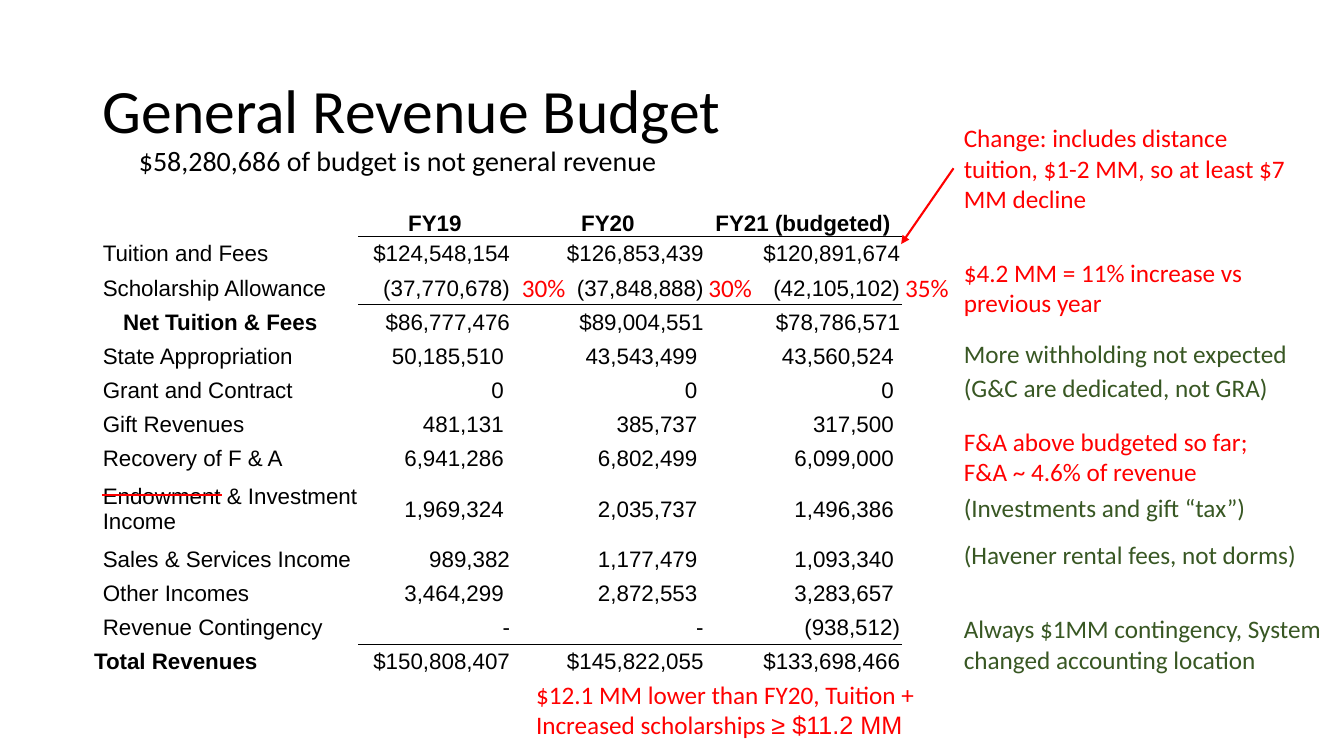
from lxml.etree import SubElement
from pptx import Presentation
from pptx.dml.color import RGBColor
from pptx.enum.shapes import MSO_CONNECTOR
from pptx.enum.text import MSO_ANCHOR as Anchor, PP_ALIGN as Align
from pptx.oxml import parse_xml
from pptx.oxml.ns import nsdecls, qn
from pptx.util import Cm, Pt

COLORS = {"black": "000000", "white": "FFFFFF", "red": "FF0000", "green": "385723"}

BUDGET = [
    ("", "FY19", "FY20", "FY21 (budgeted)"),
    ("Tuition and Fees", "$124,548,154", "$126,853,439", "$120,891,674"),
    ("Scholarship Allowance", "(37,770,678)", "(37,848,888)", "(42,105,102)"),
    ("Net Tuition & Fees", "$86,777,476", "$89,004,551", "$78,786,571"),
    ("State Appropriation", "50,185,510 ", "43,543,499 ", "43,560,524 "),
    ("Grant and Contract", "0 ", "0 ", "0 "),
    ("Gift Revenues", "481,131 ", "385,737 ", "317,500 "),
    ("Recovery of F & A", "6,941,286 ", "6,802,499 ", "6,099,000 "),
    ("Endowment & Investment Income", "1,969,324 ", "2,035,737 ", "1,496,386 "),
    ("Sales & Services Income", "989,382", "1,177,479 ", "1,093,340 "),
    ("Other Incomes", "3,464,299 ", "2,872,553 ", "3,283,657 "),
    ("Revenue Contingency", "-", "-", "(938,512)"),
    ("Total Revenues", "$150,808,407", "$145,822,055", "$133,698,466"),
]
COLUMN_WIDTHS = [6.7, 3.84, 4.88, 4.95]
ROW_HEIGHT = 0.86
SPECIAL_HEIGHTS = {0: 1.46, 8: 1.68}
RULED_ROWS = (0, 2, 11)
LABEL_INDENTS = {"Net Tuition & Fees": 0.76, "Total Revenues": 0.03}

NOTE_X = 24.04
NOTES = [
    (NOTE_X, 2.97, 9.1, 2.56, "red",
     ["Change: includes distance tuition, $1-2 MM, so at least $7 MM decline"]),
    (NOTE_X, 6.35, 9.1, 1.8, "red", ["$4.2 MM = 11% increase vs previous year"]),
    (NOTE_X, 8.41, 8.76, 1.03, "green", ["More withholding not expected"]),
    (NOTE_X, 9.25, 9.1, 1.03, "green", ["(G&C are dedicated, not GRA)"]),
    (NOTE_X, 10.62, 9.1, 1.8, "red",
     ["F&A above budgeted so far;", "F&A ~ 4.6% of revenue"]),
    (NOTE_X, 12.27, 9.1, 1.03, "green", ["(Investments and gift “tax”)"]),
    (NOTE_X, 13.46, 9.1, 1.03, "green", ["(Havener rental fees, not dorms)"]),
    (NOTE_X, 15.34, 9.63, 1.8, "green",
     ["Always $1MM contingency, System changed accounting location"]),
]
DISCOUNT_RATES = [(12.9, "30%"), (17.6, "30%"), (22.56, "35%")]
DECLINE = "$12.1 MM lower than FY20, Tuition + Increased scholarships "
DECLINE_CAUSE = "≥ $11.2 MM"


def style(paragraph, size, color="black", face="Calibri", bold=False):
    font = paragraph.font
    font.name, font.size, font.bold = face, Pt(size), bold
    font.color.rgb = RGBColor.from_string(COLORS[color])


def add_text(slide, x, y, width, height, lines, size=18, color="black", wrap=True):
    frame = slide.shapes.add_textbox(Cm(x), Cm(y), Cm(width), Cm(height)).text_frame
    frame.word_wrap = wrap
    frame.text = "\n".join(lines)
    for paragraph in frame.paragraphs:
        style(paragraph, size, color)
    return frame


def add_line(slide, start, end, width, arrow=False):
    line = slide.shapes.add_connector(
        MSO_CONNECTOR.STRAIGHT, *(Cm(value) for value in start + end))
    line.line.color.rgb = RGBColor.from_string(COLORS["red"])
    line.line.width = Pt(width)
    if arrow:
        SubElement(line.line._get_or_add_ln(), qn("a:tailEnd"), type="triangle")
    SubElement(line._element.spPr, qn("a:effectLst"))


def add_border(cell, side):
    cell._tc.get_or_add_tcPr().insert(0, parse_xml(
        f'<a:{side} {nsdecls("a")} w="12700"><a:solidFill>'
        f'<a:srgbClr val="{COLORS["black"]}"/></a:solidFill></a:{side}>'))


def fill_cell(cell, row, column, text):
    cell.fill.solid()
    cell.fill.fore_color.rgb = RGBColor.from_string(COLORS["white"])
    cell.margin_left = Cm(0.03 if column else LABEL_INDENTS.get(text, 0.25))
    cell.margin_right = cell.margin_top = Cm(0.03)
    cell.margin_bottom = 0
    cell.vertical_anchor = Anchor.MIDDLE if row else Anchor.BOTTOM
    cell.text = text
    paragraph = cell.text_frame.paragraphs[0]
    style(paragraph, 16, face="Arial", bold=row == 0 or text in LABEL_INDENTS)
    if column:
        paragraph.alignment = Align.RIGHT if row else Align.CENTER
        if row in RULED_ROWS:
            add_border(cell, "lnB")
        if row - 1 in RULED_ROWS:
            add_border(cell, "lnT")


def add_budget(slide):
    heights = [SPECIAL_HEIGHTS.get(row, ROW_HEIGHT) for row in range(len(BUDGET))]
    table = slide.shapes.add_table(
        len(BUDGET), len(COLUMN_WIDTHS), Cm(2.34), Cm(4.5),
        Cm(sum(COLUMN_WIDTHS)), Cm(sum(heights))).table
    table.first_row = table.horz_banding = False
    for column, width in zip(table.columns, COLUMN_WIDTHS):
        column.width = Cm(width)
    for row, (entries, height) in enumerate(zip(BUDGET, heights)):
        table.rows[row].height = Cm(height)
        for column, text in enumerate(entries):
            fill_cell(table.cell(row, column), row, column, text)


def main():
    deck = Presentation()
    deck.slide_width, deck.slide_height = Cm(33.87), Cm(19.05)
    slide = deck.slides.add_slide(deck.slide_layouts[6])

    title = add_text(slide, 2.34, 1.02, 29.21, 3.68, ["General Revenue Budget"], 44)
    title.vertical_anchor = Anchor.MIDDLE
    title.paragraphs[0].line_spacing = 0.9
    add_text(slide, 3.25, 3.48, 13.67, 1.12,
             ["$58,280,686 of budget is not general revenue"], 20, wrap=False)

    add_budget(slide)
    for x, rate in DISCOUNT_RATES:
        add_text(slide, x, 6.75, 1.63, 1.03, [rate], color="red", wrap=False)
    for x, y, width, height, color, lines in NOTES:
        add_text(slide, x, y, width, height, lines, color=color)

    decline = add_text(slide, 13.26, 16.99, 10.11, 1.8, [DECLINE], color="red")
    cause = decline.paragraphs[0].add_run()
    cause.text = DECLINE_CAUSE
    cause.font.name = "Arial"

    add_line(slide, (24.03, 4.24), (22.71, 6.15), 1.5, arrow=True)
    add_line(slide, (2.57, 12.47), (5.59, 12.47), 1)
    deck.save("out.pptx")


if __name__ == "__main__":
    main()
